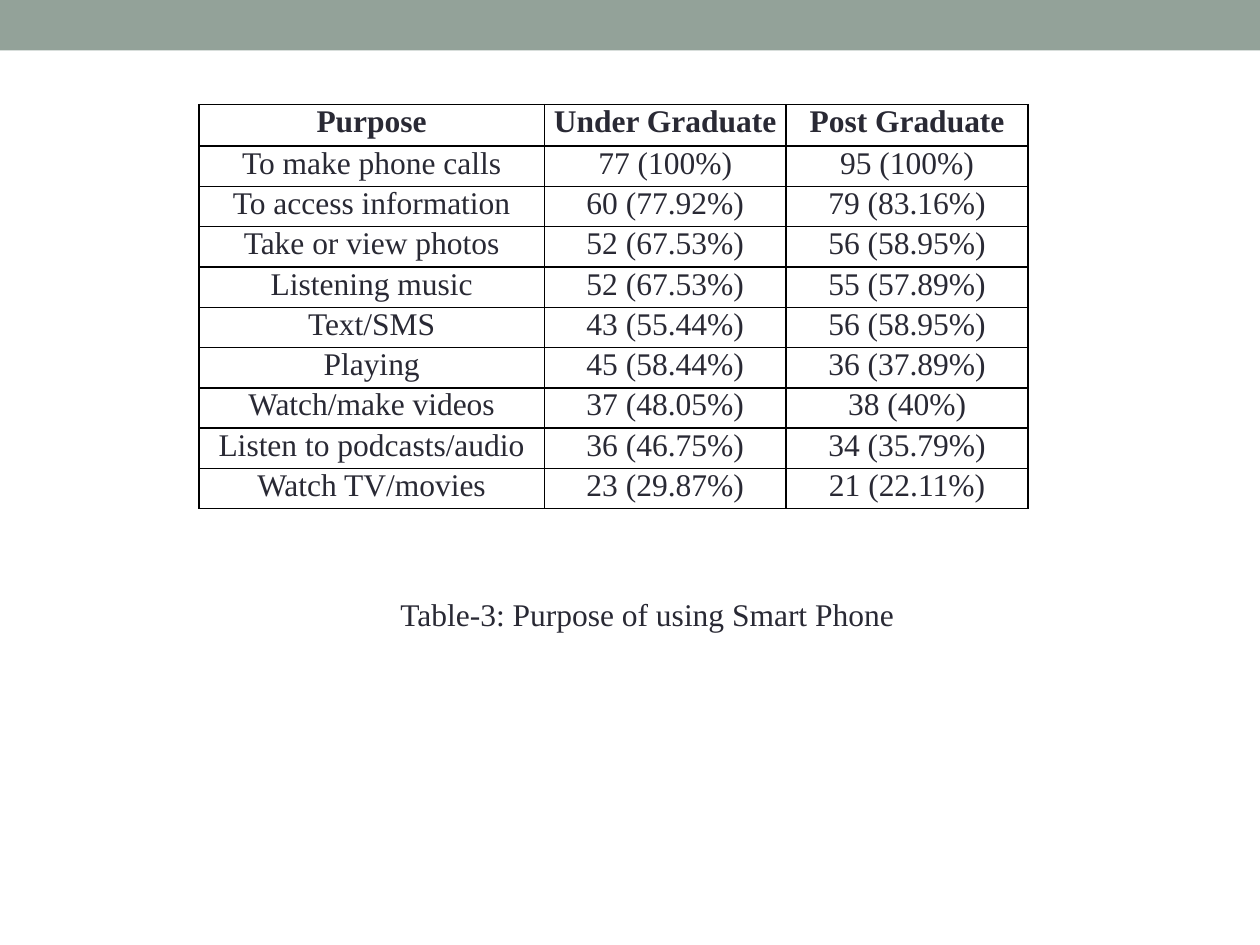
from dataclasses import dataclass

from lxml.etree import SubElement
from pptx import Presentation
from pptx.dml.color import RGBColor
from pptx.enum.shapes import MSO_SHAPE as Shape
from pptx.enum.text import MSO_ANCHOR as Anchor, MSO_AUTO_SIZE as AutoSize, PP_ALIGN as Align
from pptx.oxml.ns import qn
from pptx.util import Inches, Pt


@dataclass(frozen=True)
class Theme:
    font: str = "Times New Roman"
    size: int = 18
    text: str = "292934"
    band: str = "93A299"
    border: str = "000000"
    border_width: int = 1


class SlideBuilder:
    def __init__(self, slide, theme):
        self.s = slide
        self.theme = theme

    def style(self, p, bold=False, align=Align.LEFT):
        p.alignment = align
        p.font.name = self.theme.font
        p.font.size = Pt(self.theme.size)
        p.font.bold = bold
        p.font.color.rgb = RGBColor.from_string(self.theme.text)

    def band(self, x, y, w, h):
        sp = self.s.shapes.add_shape(Shape.RECTANGLE, x, y, w, h)
        sp.shadow.inherit = False
        sp.fill.solid()
        sp.fill.fore_color.rgb = RGBColor.from_string(self.theme.band)
        sp.line.fill.background()

    def text(self, x, y, w, h, text):
        tf = self.s.shapes.add_textbox(x, y, w, h).text_frame
        tf.word_wrap = True
        tf.auto_size = AutoSize.SHAPE_TO_FIT_TEXT
        p = tf.paragraphs[0]
        p.text = text
        self.style(p)

    def borders(self, cell):
        tc_pr = cell._tc.get_or_add_tcPr()
        for side in ("lnL", "lnR", "lnT", "lnB"):
            ln = SubElement(tc_pr, qn(f"a:{side}"), w=str(Pt(self.theme.border_width)))
            fill = SubElement(ln, qn("a:solidFill"))
            SubElement(fill, qn("a:srgbClr"), val=self.theme.border)

    def cell(self, cell, text, bold):
        self.borders(cell)
        cell.fill.background()
        cell.margin_left = cell.margin_right = Inches(0.07)
        cell.margin_top = cell.margin_bottom = 0
        cell.vertical_anchor = Anchor.TOP
        p = cell.text_frame.paragraphs[0]
        p.text = text
        self.style(p, bold, Align.CENTER)

    def table(self, x, y, widths, heights, rows):
        frame = self.s.shapes.add_table(
            len(rows), len(widths), x, y, sum(widths), sum(heights))
        table = frame.table
        table.first_row = table.horz_banding = False
        for column, width in zip(table.columns, widths):
            column.width = width
        for i, (row, height, values) in enumerate(zip(table.rows, heights, rows)):
            row.height = height
            for cell, value in zip(row.cells, values):
                self.cell(cell, value, bold=i == 0)


PURPOSES = [
    ("Purpose", "Under Graduate", "Post Graduate"),
    ("To make phone calls", "77 (100%)", "95 (100%)"),
    ("To access information", "60 (77.92%)", "79 (83.16%)"),
    ("Take or view photos", "52 (67.53%)", "56 (58.95%)"),
    ("Listening music", "52 (67.53%)", "55 (57.89%)"),
    ("Text/SMS", "43 (55.44%)", "56 (58.95%)"),
    ("Playing", "45 (58.44%)", "36 (37.89%)"),
    ("Watch/make videos", "37 (48.05%)", "38 (40%)"),
    ("Listen to podcasts/audio", "36 (46.75%)", "34 (35.79%)"),
    ("Watch TV/movies", "23 (29.87%)", "21 (22.11%)"),
]


def main():
    prs = Presentation()
    prs.slide_width, prs.slide_height = Inches(10), Inches(7.5)
    builder = SlideBuilder(prs.slides.add_slide(prs.slide_layouts[6]), Theme())

    # Top band
    builder.band(0, 0, prs.slide_width, Inches(0.4))

    # Table of purposes
    widths = [Inches(2.74), Inches(1.92), Inches(1.92)]
    heights = [Inches(0.33)] + [Inches(0.32)] * (len(PURPOSES) - 1)
    builder.table(Inches(1.58), Inches(0.83), widths, heights, PURPOSES)

    # Caption
    builder.text(Inches(3.08), Inches(4.67), Inches(4.58), Inches(0.4),
                 "Table-3: Purpose of using Smart Phone")

    prs.save("out.pptx")


if __name__ == "__main__":
    main()
